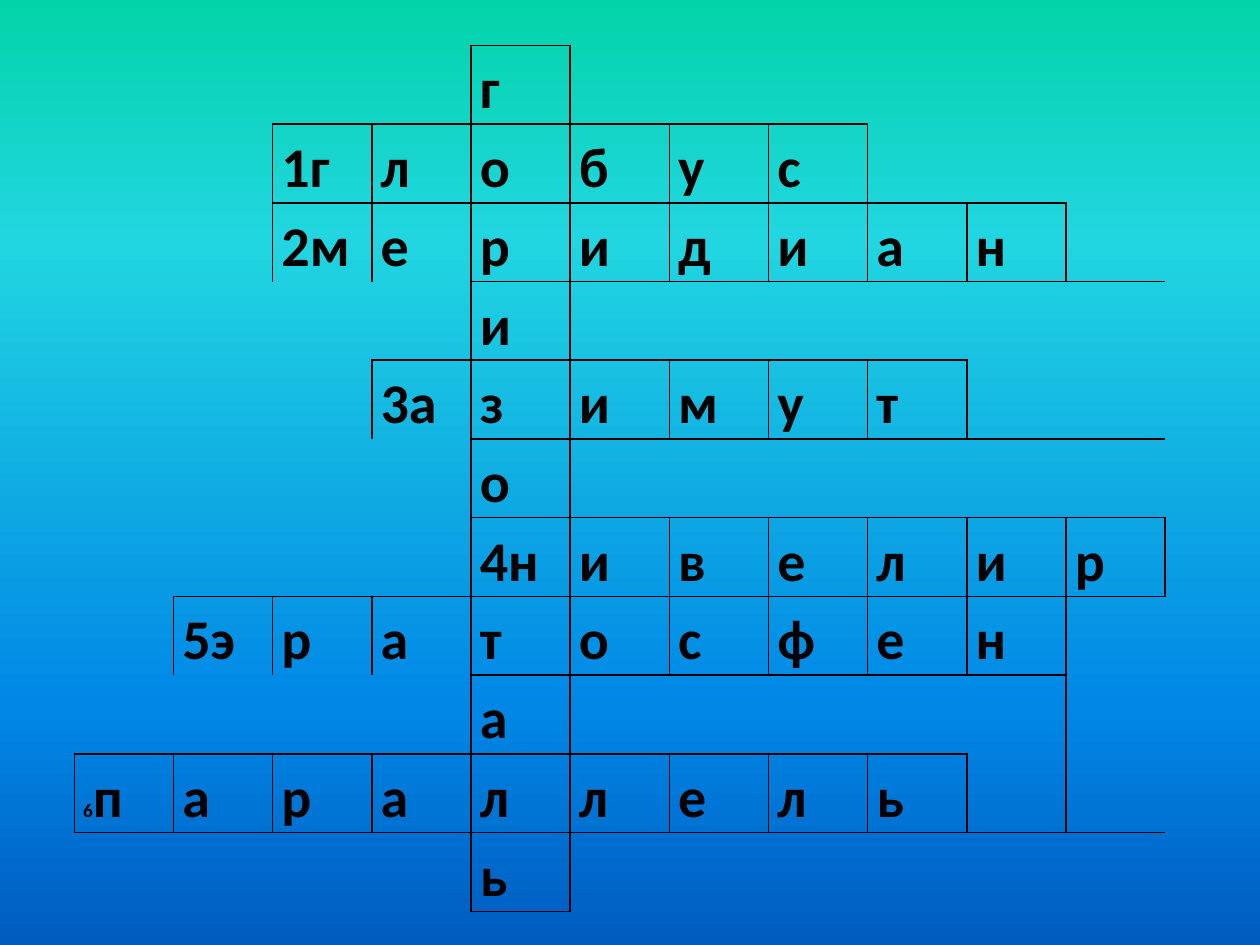
from dataclasses import dataclass

from lxml.etree import SubElement
from pptx import Presentation
from pptx.dml.color import RGBColor
from pptx.oxml.ns import qn
from pptx.util import Inches, Pt


@dataclass(frozen=True)
class Theme:
    """Colours, type sizes and line weights of the slide."""
    font: str = "Calibri"
    ink: str = "000000"
    letter_size: int = 32
    clue_size: int = 11
    leading: float = 1.15
    rule: int = 1
    sky: tuple = ((0, "03D4A8"), (25, "21D6E0"), (75, "0087E6"), (100, "005CBF"))


THEME = Theme()
GRID = 11
LEFT, TOP, WIDTH, HEIGHT = 0.59, 0.36, 8.66, 6.85
NO_STYLE = "{2D5ABB26-0587-4C30-8999-92F81FD0307C}"

# Start column and letters of each row; a small clue number stands before "|".
WORDS = (
    (4, "г"),
    (2, "1г л о б у с"),
    (2, "2м е р и д и а н"),
    (4, "и"),
    (3, "3а з и м у т"),
    (4, "о"),
    (4, "4н и в е л и р"),
    (1, "5э р а т о с ф е н"),
    (4, "а"),
    (0, "6|п а р а л л е л ь"),
    (4, "ь"),
)

# Row, column, row span, column span and ruled edges of each empty area.
BLANKS = (
    (0, 0, 1, 4, "R"), (0, 5, 1, 6, "LB"),
    (1, 0, 1, 2, "R"), (1, 8, 1, 3, "LB"),
    (2, 0, 1, 2, "R"), (2, 10, 1, 1, "L"),
    (3, 0, 1, 4, "R"), (3, 5, 1, 6, "LTB"),
    (4, 0, 1, 3, "R"), (4, 9, 1, 2, "L"),
    (5, 0, 1, 4, "R"), (5, 5, 1, 6, "LTB"),
    (6, 0, 1, 4, "R"),
    (7, 0, 1, 1, "R"), (7, 10, 3, 1, "LTB"),
    (8, 0, 1, 4, "RB"), (8, 5, 1, 5, "LTB"),
    (9, 9, 1, 1, "L"),
    (10, 0, 1, 4, "TR"), (10, 5, 1, 6, "LT"),
)


def paint_background(slide):
    """Fill the slide with the vertical gradient."""
    fill = slide.background.fill
    fill.gradient()
    fill.gradient_angle = 270
    stops = next(slide.element.iter(qn("a:gsLst")))
    for stop in list(stops):
        stops.remove(stop)
    for percent, colour in THEME.sky:
        stop = SubElement(stops, qn("a:gs"), pos=str(percent * 1000))
        SubElement(stop, qn("a:srgbClr"), val=colour)


def rule_cell(cell, edges):
    """Draw the named edges of a cell and leave its fill clear."""
    properties = cell._tc.get_or_add_tcPr()
    for edge in "LRTB":
        line = SubElement(properties, qn(f"a:ln{edge}"), w=str(Pt(THEME.rule)))
        if edge in edges:
            ink = SubElement(line, qn("a:solidFill"))
            SubElement(ink, qn("a:srgbClr"), val=THEME.ink)
        else:
            SubElement(line, qn("a:noFill"))
    cell.fill.background()


def add_run(paragraph, text, size):
    """Add one bold run in the theme font."""
    run = paragraph.add_run()
    run.text = text
    run.font.name = THEME.font
    run.font.size = Pt(size)
    run.font.bold = True
    run.font.color.rgb = RGBColor.from_string(THEME.ink)


def write_letter(cell, entry):
    """Put a letter, with any small clue number, in a ruled square."""
    rule_cell(cell, "LRTB")
    cell.margin_left = cell.margin_right = Inches(0.07)
    cell.margin_top = cell.margin_bottom = 0
    paragraph = cell.text_frame.paragraphs[0]
    paragraph.line_spacing = THEME.leading
    *clue, letter = entry.split("|")
    for number in clue:
        add_run(paragraph, number, THEME.clue_size)
    add_run(paragraph, letter, THEME.letter_size)


def clear_area(crossword, row, column, height, width, edges):
    """Merge an empty area and rule its outer edges."""
    bottom, right = row + height - 1, column + width - 1
    for r in range(row, bottom + 1):
        for c in range(column, right + 1):
            outer = {"L": c == column, "R": c == right, "T": r == row, "B": r == bottom}
            rule_cell(crossword.cell(r, c), [edge for edge in edges if outer[edge]])
    if height * width > 1:
        crossword.cell(row, column).merge(crossword.cell(bottom, right))


def add_crossword(slide):
    """Add the square grid and return its table."""
    frame = slide.shapes.add_table(
        GRID, GRID, Inches(LEFT), Inches(TOP), Inches(WIDTH), Inches(HEIGHT))
    crossword = frame.table
    crossword.first_row = crossword.horz_banding = False
    next(frame.element.iter(qn("a:tableStyleId"))).text = NO_STYLE
    for column in crossword.columns:
        column.width = Inches(WIDTH / GRID)
    for row in crossword.rows:
        row.height = Inches(HEIGHT / GRID)
    return crossword


def main():
    """Build the crossword slide."""
    deck = Presentation()
    deck.slide_width, deck.slide_height = Inches(10), Inches(7.5)
    slide = deck.slides.add_slide(deck.slide_layouts[6])
    paint_background(slide)
    crossword = add_crossword(slide)
    for row, (start, word) in enumerate(WORDS):
        for column, entry in enumerate(word.split(), start):
            write_letter(crossword.cell(row, column), entry)
    for area in BLANKS:
        clear_area(crossword, *area)
    deck.save("out.pptx")


if __name__ == "__main__":
    main()
